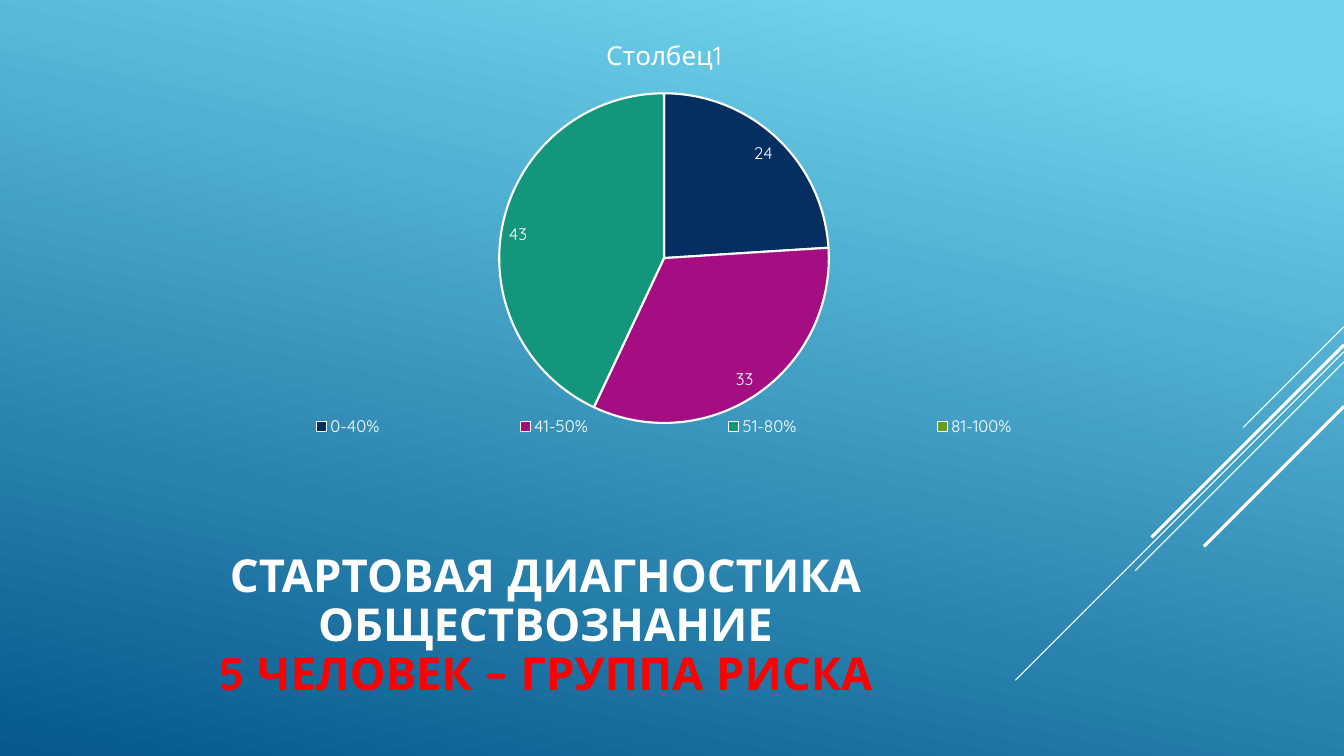
from lxml import etree
from pptx import Presentation
from pptx.chart.data import CategoryChartData
from pptx.dml.color import RGBColor
from pptx.enum import chart as ch, shapes, text
from pptx.oxml.ns import qn
from pptx.util import Cm, Pt

FONT = "Quicksand"
COLORS = {"white": "FFFFFF", "risk": "FF0000", "sky": "6ED2EB", "deep": "06588E"}
HEADING = [("СТАРТОВАЯ ДИАГНОСТИКА", "white"), ("ОБЩЕСТВОЗНАНИЕ", "white"),
           ("5 ЧЕЛОВЕК – ГРУППА РИСКА", "risk")]
SERIES = "Столбец1"
SCORES = [("0-40%", 24, "052F61"), ("41-50%", 33, "A50E82"),
          ("51-80%", 43, "14967C"), ("81-100%", 0, "6A9E1F")]
SLIDE_W, SLIDE_H = 33.87, 19.05
# Diagonals from the right edge: top, run to the left (cm), width (pt)
DIAGONALS = [(8.23, 2.54, 0.75), (8.86, 8.28, 0.75), (9.12, 5.26, 0.75),
             (8.69, 4.85, 2.25), (10.24, 3.53, 2.25)]
# Fractions of the chart: left, top, width, height
PIE_AREA = (0.36, 0.166, 0.28, 0.722)
LEGEND_AREA = (0.09, 0.865, 0.82, 0.06)


def rgb(name):
    return RGBColor.from_string(COLORS.get(name, name))


def style(font, size, color="white", bold=False):
    font.name, font.size, font.bold = FONT, Pt(size), bold
    font.color.rgb = rgb(color)


def set_layout(parent, area, after=None, inner=False):
    """Fix the place of a chart part, given as fractions of the chart."""
    for old in parent.findall(qn("c:layout")):
        parent.remove(old)
    layout = etree.Element(qn("c:layout"))
    manual = etree.SubElement(layout, qn("c:manualLayout"))
    settings = [("layoutTarget", "inner")] if inner else []
    settings += [("xMode", "edge"), ("yMode", "edge"), *zip("xywh", area)]
    for tag, value in settings:
        etree.SubElement(manual, qn("c:" + tag)).set("val", str(value))
    if after is None:
        parent.insert(0, layout)
    else:
        after.addnext(layout)


def add_background(slide):
    fill = slide.background.fill
    fill.gradient()
    fill.gradient_angle = 258
    for stop, (position, color) in zip(fill.gradient_stops, [(0.1, "sky"), (1, "deep")]):
        stop.position = position
        stop.color.rgb = rgb(color)


def add_diagonals(slide):
    for top, run, width in DIAGONALS:
        diagonal = slide.shapes.add_connector(
            shapes.MSO_CONNECTOR.STRAIGHT, Cm(SLIDE_W), Cm(top),
            Cm(SLIDE_W - run), Cm(top + run))
        diagonal.line.color.rgb = rgb("white")
        diagonal.line.width = Pt(width)
        etree.SubElement(diagonal._element.spPr, qn("a:effectLst"))


def add_heading(slide):
    frame = slide.shapes.add_textbox(Cm(1.9), Cm(13.49), Cm(23.7), Cm(4.6)).text_frame
    frame.word_wrap = True
    frame.vertical_anchor = text.MSO_ANCHOR.MIDDLE
    for i, (line, color) in enumerate(HEADING):
        paragraph = frame.add_paragraph() if i else frame.paragraphs[0]
        paragraph.text = line
        paragraph.alignment = text.PP_ALIGN.CENTER
        paragraph.line_spacing = 0.9
        style(paragraph.font, 32.4, color, bold=True)


def add_score_pie(slide):
    data = CategoryChartData()
    data.categories = [label for label, _, _ in SCORES]
    data.add_series(SERIES, [value for _, value, _ in SCORES])
    chart = slide.shapes.add_chart(ch.XL_CHART_TYPE.PIE, Cm(1.9), Cm(0.43),
                                   Cm(29.67), Cm(11.53), data).chart
    style(chart.font, 10)

    chart.has_title = True
    title = chart.chart_title.text_frame.paragraphs[0]
    title.text = SERIES
    style(title.font, 18.6)

    chart.has_legend = True
    legend = chart.legend
    legend.position = ch.XL_LEGEND_POSITION.BOTTOM
    legend.include_in_layout = False
    style(legend.font, 12)
    set_layout(legend._element, LEGEND_AREA, legend._element.find(qn("c:legendPos")))

    pie = chart.plots[0]
    pie.vary_by_categories = True
    set_layout(chart._chartSpace.chart.plotArea, PIE_AREA, inner=True)
    for i, (_, _, color) in enumerate(SCORES):
        slice_format = pie.series[0].points[i].format
        slice_format.fill.solid()
        slice_format.fill.fore_color.rgb = rgb(color)
        slice_format.line.color.rgb = rgb("white")
        slice_format.line.width = Pt(1.5)

    pie.has_data_labels = True
    labels = pie.data_labels
    labels.show_value = True
    labels.show_percentage = False
    labels.position = ch.XL_LABEL_POSITION.INSIDE_END
    labels.number_format = "0;;"  # an empty group gets no label
    labels.number_format_is_linked = False
    style(labels.font, 12)


def main():
    deck = Presentation()
    deck.slide_width, deck.slide_height = Cm(SLIDE_W), Cm(SLIDE_H)
    slide = deck.slides.add_slide(deck.slide_layouts[6])
    add_background(slide)
    add_diagonals(slide)
    add_heading(slide)
    add_score_pie(slide)
    deck.save("out.pptx")


if __name__ == "__main__":
    main()
